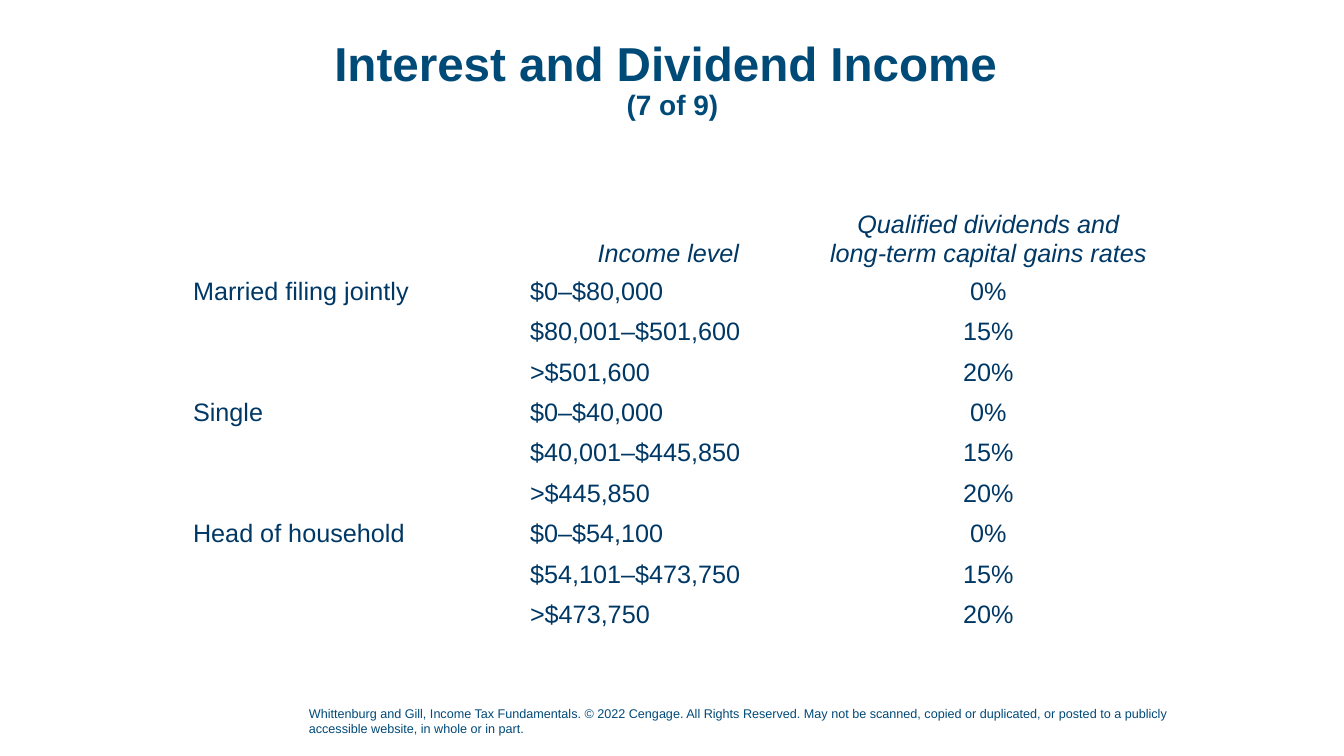
from dataclasses import dataclass

from pptx import Presentation
from pptx.dml.color import RGBColor
from pptx.enum.text import MSO_ANCHOR, MSO_AUTO_SIZE, PP_ALIGN
from pptx.util import Emu, Pt

EMU_PER_PX = 914400 / 100.8


@dataclass(frozen=True)
class Theme:
    font: str = "Arial"
    heading: str = "004A78"
    body: str = "003865"
    title_size: int = 34
    part_size: int = 20
    table_size: int = 18
    footer_size: int = 9


THEME = Theme()

HEADERS = ["", "Income level", "Qualified dividends and long-term capital gains rates"]
RATES = ["0%", "15%", "20%"]
BRACKETS = {
    "Married filing jointly": ["$0–$80,000", "$80,001–$501,600", ">$501,600"],
    "Single": ["$0–$40,000", "$40,001–$445,850", ">$445,850"],
    "Head of household": ["$0–$54,100", "$54,101–$473,750", ">$473,750"],
}
COLUMN_WIDTHS = [337, 297, 343]
HEADER_HEIGHT = 66
ROW_HEIGHT = 38
FOOTER = (
    "Whittenburg and Gill, Income Tax Fundamentals. © 2022 Cengage. All Rights Reserved. "
    "May not be scanned, copied or duplicated, or posted to a publicly accessible website, "
    "in whole or in part."
)


def px(length):
    return Emu(round(length * EMU_PER_PX))


def apply(target, values):
    for name, value in values.items():
        setattr(target, name, value)


def style_font(font, size, color, **values):
    apply(font, {"name": THEME.font, "size": Pt(size), **values})
    font.color.rgb = RGBColor.from_string(color)


def add_title(page, text, part):
    """Fill the title placeholder, with the part number on a smaller second line."""
    title = page.shapes.title
    apply(title, {"left": px(93), "top": px(40), "width": px(1159), "height": px(75)})
    frame = title.text_frame
    apply(frame, {
        "margin_left": 0, "margin_top": 0, "margin_right": 0, "margin_bottom": 0,
        "vertical_anchor": MSO_ANCHOR.TOP, "auto_size": MSO_AUTO_SIZE.NONE,
        "word_wrap": True,
    })
    para = frame.paragraphs[0]
    apply(para, {"alignment": PP_ALIGN.CENTER, "line_spacing": 0.9})
    for words, size in ((text, THEME.title_size), (part, THEME.part_size)):
        if para.runs:
            para.add_line_break()
        span = para.add_run()
        span.text = words
        style_font(span.font, size, THEME.heading, bold=True)


def add_footer(page, text):
    box = page.shapes.add_textbox(px(299), px(701), px(936), px(40))
    frame = box.text_frame
    frame.word_wrap = True
    span = frame.paragraphs[0].add_run()
    span.text = text
    style_font(span.font, THEME.footer_size, THEME.heading)


def fill_cell(cell, text, centered, header):
    cell.fill.background()
    cell.vertical_anchor = MSO_ANCHOR.BOTTOM if header else MSO_ANCHOR.TOP
    para = cell.text_frame.paragraphs[0]
    para.alignment = PP_ALIGN.CENTER if centered else PP_ALIGN.LEFT
    style_font(para.font, THEME.table_size, THEME.body, bold=False, italic=header)
    if text:
        span = para.add_run()
        span.text = text
        style_font(span.font, THEME.table_size, THEME.body, bold=False, italic=header)


def rate_rows():
    """List the table rows, naming each filing status only on its first row."""
    rows = [HEADERS]
    for status, levels in BRACKETS.items():
        for index, (level, rate) in enumerate(zip(levels, RATES)):
            rows.append(["" if index else status, level, rate])
    return rows


def add_rate_table(page):
    rows = rate_rows()
    height = HEADER_HEIGHT + ROW_HEIGHT * (len(rows) - 1)
    frame = page.shapes.add_table(
        len(rows), len(HEADERS), px(183), px(202), px(sum(COLUMN_WIDTHS)), px(height)
    )
    table = frame.table
    apply(table, {"first_row": False, "horz_banding": False})
    for column, width in zip(table.columns, COLUMN_WIDTHS):
        column.width = px(width)
    for row_index, texts in enumerate(rows):
        header = row_index == 0
        table.rows[row_index].height = px(HEADER_HEIGHT if header else ROW_HEIGHT)
        for column_index, text in enumerate(texts):
            centered = header or column_index == 2
            fill_cell(table.cell(row_index, column_index), text, centered, header)
    clear_borders(table)


def clear_borders(table):
    for cell in table.iter_cells():
        properties = cell._tc.get_or_add_tcPr()
        for position, side in enumerate(("lnL", "lnR", "lnT", "lnB")):
            line = properties.makeelement(qn(f"a:{side}"), {"w": "0"})
            line.append(line.makeelement(qn("a:noFill"), {}))
            properties.insert(position, line)


def main():
    deck = Presentation()
    apply(deck, {"slide_width": px(1344), "slide_height": px(756)})
    page = deck.slides.add_slide(deck.slide_layouts[5])
    add_footer(page, FOOTER)
    add_title(page, "Interest and Dividend Income ", "(7 of 9)")
    add_rate_table(page)
    deck.save("out.pptx")


from pptx.oxml.ns import qn

if __name__ == "__main__":
    main()
